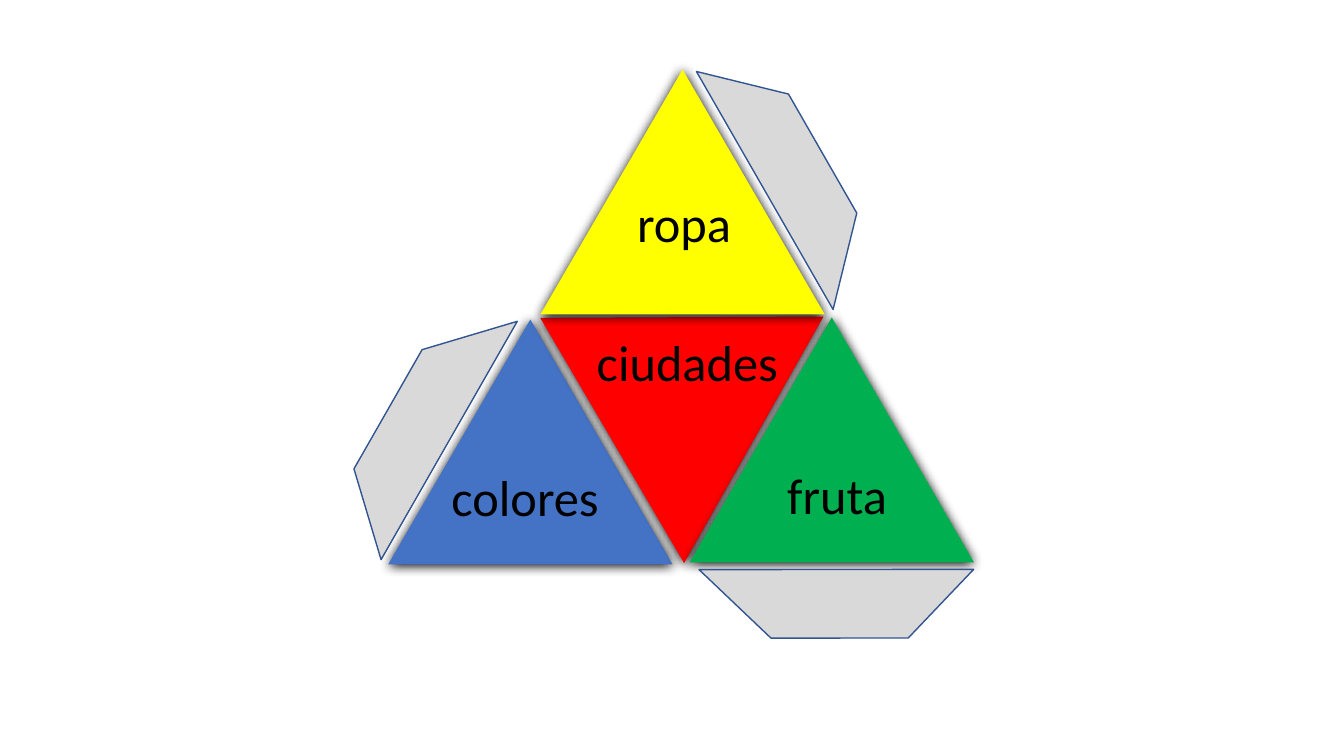
from lxml import etree
from pptx import Presentation
from pptx import util as u
from pptx.dml.color import RGBColor
from pptx.enum import shapes, text
from pptx.oxml import ns

BLUE = RGBColor(0x44, 0x72, 0xC4)
RED = RGBColor(0xFF, 0x00, 0x00)
GREEN = RGBColor(0x00, 0xB0, 0x50)
YELLOW = RGBColor(0xFF, 0xFF, 0x00)
GREY = RGBColor(0xD9, 0xD9, 0xD9)
OUTLINE = RGBColor(0x32, 0x54, 0x91)
BLACK = RGBColor(0x00, 0x00, 0x00)


class PyramidNet:
    """Draws the faces, glue tabs and labels of a paper pyramid on one page."""

    font_name = "Calibri"
    font_size = u.Pt(36)
    face_size = u.Inches(2.82), u.Inches(2.43)
    tab_size = u.Inches(1.97), u.Inches(1.88)
    label_height = u.Inches(0.71)

    def __init__(self, page):
        self.page = page

    def _shape(self, kind, left, top, size, color, rotation):
        shape = self.page.shapes.add_shape(kind, u.Inches(left), u.Inches(top), *size)
        shape.rotation = rotation
        shape.shadow.inherit = False
        shape.fill.solid()
        shape.fill.fore_color.rgb = color
        return shape

    def face(self, left, top, color, rotation=0):
        kind = shapes.MSO_SHAPE.ISOSCELES_TRIANGLE
        shape = self._shape(kind, left, top, self.face_size, color, rotation)
        shape.line.fill.background()
        effects = shape._element.spPr.find(ns.qn("a:effectLst"))
        shadow = etree.SubElement(
            effects, ns.qn("a:outerShdw"), blurRad=str(u.Pt(8.5)),
            dist=str(u.Pt(1)), dir="5400000", algn="ctr", rotWithShape="0")
        etree.SubElement(shadow, ns.qn("a:srgbClr"), val=str(BLACK))

    def tab(self, left, top, rotation):
        kind = shapes.MSO_SHAPE.DIAGONAL_STRIPE
        shape = self._shape(kind, left, top, self.tab_size, GREY, rotation)
        shape.line.color.rgb = OUTLINE
        shape.line.width = u.Pt(1)

    def label(self, left, top, width, wording):
        box = self.page.shapes.add_textbox(
            u.Inches(left), u.Inches(top), u.Inches(width), self.label_height)
        frame = box.text_frame
        frame.word_wrap = True
        frame.auto_size = text.MSO_AUTO_SIZE.SHAPE_TO_FIT_TEXT
        para = frame.paragraphs[0]
        para.text = wording
        para.font.name = self.font_name
        para.font.size = self.font_size
        para.font.color.rgb = BLACK


def main():
    deck = Presentation()
    deck.slide_width, deck.slide_height = u.Inches(13.33), u.Inches(7.5)
    net = PyramidNet(deck.slides.add_slide(deck.slide_layouts[6]))

    net.face(3.85, 3.17, BLUE)
    net.face(5.71, 2.54, RED, rotation=59.6)
    net.face(6.84, 3.15, GREEN)
    net.face(5.36, 0.69, YELLOW)

    net.tab(6.6, 0.95, 103.8)
    net.tab(7.31, 4.71, 223.6)
    net.tab(3.47, 3.43, 343.4)

    net.label(6.22, 1.86, 1.24, "ropa")
    net.label(4.38, 4.57, 1.67, "colores")
    net.label(5.82, 3.24, 2.15, "ciudades")
    net.label(7.71, 4.56, 1.24, "fruta")

    deck.save("out.pptx")


if __name__ == "__main__":
    main()
